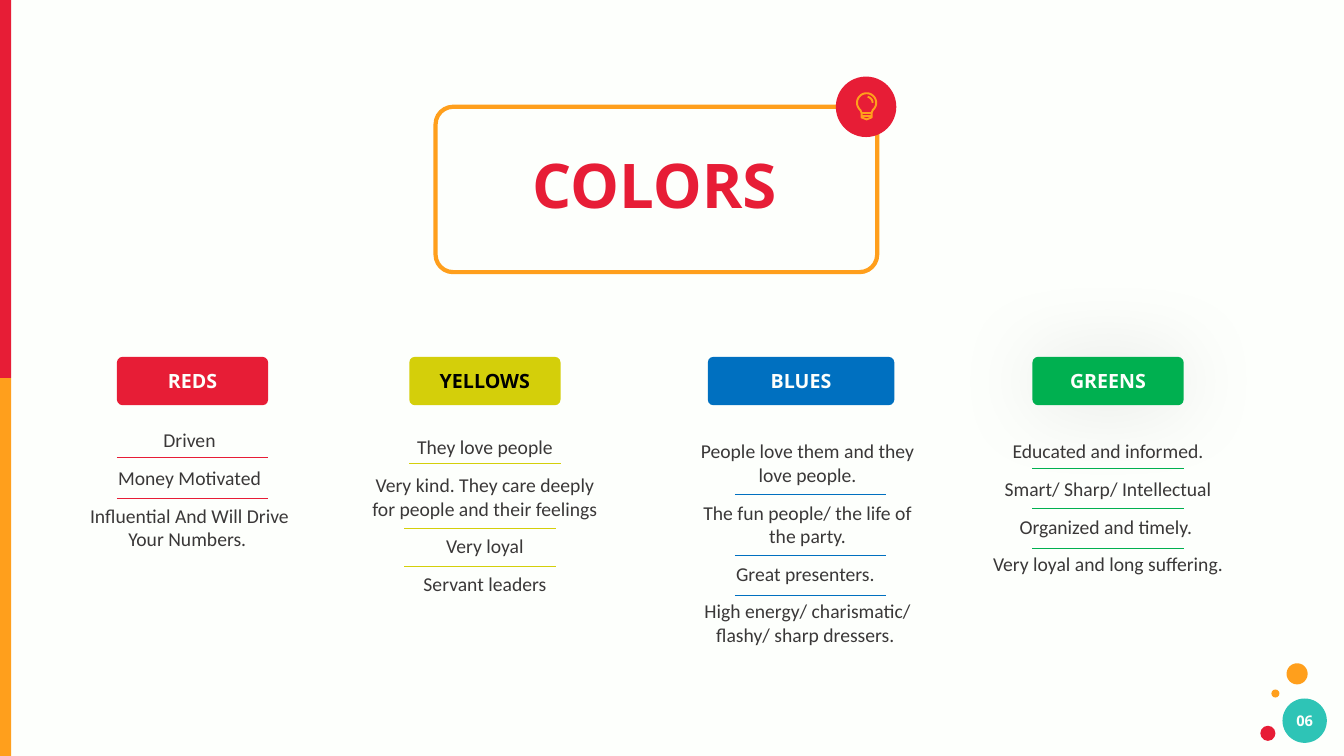
import math

from lxml import etree
from pptx import Presentation
from pptx.dml.color import RGBColor
from pptx.enum.shapes import MSO_CONNECTOR, MSO_SHAPE
from pptx.enum.text import MSO_ANCHOR, PP_ALIGN
from pptx.oxml.ns import qn
from pptx.util import Inches, Pt

RECTANGLE, OVAL, ROUNDED = MSO_SHAPE.RECTANGLE, MSO_SHAPE.OVAL, MSO_SHAPE.ROUNDED_RECTANGLE
STRAIGHT = MSO_CONNECTOR.STRAIGHT
MIDDLE, CENTER = MSO_ANCHOR.MIDDLE, PP_ALIGN.CENTER

RED = RGBColor(0xE7, 0x1D, 0x36)
ORANGE = RGBColor(0xFF, 0x9F, 0x1C)
TEAL = RGBColor(0x2E, 0xC4, 0xB6)
YELLOW = RGBColor(0xD4, 0xCF, 0x0A)
BLUE = RGBColor(0x00, 0x70, 0xC0)
GREEN = RGBColor(0x00, 0xB0, 0x50)
WHITE = RGBColor(0xFD, 0xFF, 0xFC)
BLACK = RGBColor(0x00, 0x00, 0x00)
GREY = RGBColor(0x3A, 0x38, 0x38)

presentation = Presentation()
presentation.slide_width, presentation.slide_height = Inches(13.33), Inches(7.5)
slide = presentation.slides.add_slide(presentation.slide_layouts[6])
slide.background.fill.solid()
slide.background.fill.fore_color.rgb = WHITE


def add_filled(kind, left, top, width, height, color):
    shape = slide.shapes.add_shape(kind, Inches(left), Inches(top), Inches(width), Inches(height))
    shape.shadow.inherit = False
    shape.fill.solid()
    shape.fill.fore_color.rgb = color
    shape.line.fill.background()
    return shape


def write(shape, *lines, font, size, color, bold=False, space_before=0):
    """Fill the shape with one centred paragraph per line."""
    frame = shape.text_frame
    frame.word_wrap = True
    for index, line in enumerate(lines):
        paragraph = frame.add_paragraph() if index else frame.paragraphs[0]
        paragraph.alignment = CENTER
        paragraph.space_before = Pt(space_before)
        run = paragraph.add_run()
        run.text = line
        run.font.name, run.font.size, run.font.bold = font, Pt(size), bold
        run.font.color.rgb = color


# Side bars and corner dots
for top, color in ((0, RED), (3.75, ORANGE)):
    add_filled(RECTANGLE, 0, top, 0.11, 3.75, color)
for left, top, diameter, color in (
    (12.72, 6.93, 0.44, TEAL),
    (12.76, 6.58, 0.21, ORANGE),
    (12.5, 7.2, 0.15, RED),
    (12.61, 6.84, 0.08, ORANGE),
):
    add_filled(OVAL, left, top, diameter, diameter, color)
page_number = slide.shapes.add_textbox(Inches(12.68), Inches(7.01), Inches(0.52), Inches(0.28))
write(page_number, "06", font="Open Sans", size=10.5, color=WHITE, bold=True)

# Title frame with its badge
title_frame = add_filled(ROUNDED, 4.32, 1.06, 4.38, 1.64, WHITE)
title_frame.adjustments[0] = 0.106
title_frame.fill.background()
title_frame.line.color.rgb = ORANGE
title_frame.line.width = Pt(3)
add_filled(OVAL, 8.29, 0.76, 0.6, 0.6, RED)

# Light bulb: glass and base, two threads, a highlight; offsets from the bulb centre
glass = [(0.095 * math.cos(math.radians(angle)), 0.095 * math.sin(math.radians(angle)))
         for angle in range(130, 411, 10)]
base = [(0.05, 0.1), (0.05, 0.145), (0, 0.165), (-0.05, 0.145), (-0.05, 0.1)]
highlight = [(0.06 * math.cos(math.radians(angle)), 0.06 * math.sin(math.radians(angle)))
             for angle in range(-80, 1, 10)]
threads = [[(-0.05, y), (0.05, y)] for y in (0.1, 0.13)]
for outline, closed in ((glass + base, True), (highlight, False),
                        (threads[0], False), (threads[1], False)):
    points = [(Inches(8.595 + x), Inches(1.02 + y)) for x, y in outline]
    builder = slide.shapes.build_freeform(*points[0])
    builder.add_line_segments(points[1:], close=closed)
    stroke = builder.convert_to_shape()
    stroke.shadow.inherit = False
    stroke.fill.background()
    stroke.line.color.rgb = ORANGE
    stroke.line.width = Pt(1.4)

title = slide.shapes.add_textbox(Inches(4.32), Inches(1.41), Inches(4.34), Inches(0.84))
write(title, "COLORS", font="Noto Sans", size=44, color=RED, bold=True)

# Columns: name, colour, name colour, label left and width, text left and top, traits, rules
columns = (
    ("REDS", RED, WHITE, 1.16, 1.5, 0.64, 4.2,
     ("Driven", "Money Motivated", "Influential And Will Drive Your Numbers. "),
     ((1.16, 4.54), (1.16, 4.94))),
    ("YELLOWS", YELLOW, BLACK, 4.06, 1.5, 3.57, 4.13,
     ("They love people", "Very kind. They care deeply for people and their feelings",
      "Very loyal", "Servant leaders"),
     ((4.06, 4.6), (4.01, 5.24), (4.01, 5.62))),
    ("BLUES", BLUE, WHITE, 7.02, 1.85, 6.77, 4.31,
     ("People love them and they love people.", "The fun people/ the life of the party.",
      "Great presenters. ", "High energy/ charismatic/ flashy/ sharp dressers. "),
     ((7.29, 4.9), (7.29, 5.51), (7.29, 5.91))),
    ("GREENS", GREEN, WHITE, 10.24, 1.5, 9.75, 4.31,
     ("Educated and informed.", "Smart/ Sharp/ Intellectual",
      "Organized and timely. ", "Very loyal and long suffering. "),
     ((10.24, 4.65), (10.24, 5.04), (10.24, 5.44))),
)
for name, color, name_color, left, width, text_left, text_top, traits, rules in columns:
    label = add_filled(ROUNDED, left, 3.54, width, 0.48, color)
    label.adjustments[0] = 0.118
    label.text_frame.vertical_anchor = MIDDLE
    write(label, name, font="Open Sans", size=14, color=name_color, bold=True)
    if name == "GREENS":
        effects = label._element.spPr.find(qn("a:effectLst"))
        glow = etree.SubElement(effects, qn("a:outerShdw"), blurRad=str(Pt(60)), dist="0",
                                dir="0", algn="ctr", rotWithShape="0")
        shade = etree.SubElement(glow, qn("a:srgbClr"), val="000000")
        etree.SubElement(shade, qn("a:alpha"), val="10000")

    body = slide.shapes.add_textbox(Inches(text_left), Inches(text_top), Inches(2.48), Inches(0.78))
    write(body, *traits, font="Calibri", size=14, color=GREY, space_before=10)
    if name == "YELLOWS":
        body.text_frame.paragraphs[0].line_spacing = 1.6

    for x, y in rules:
        rule = slide.shapes.add_connector(STRAIGHT, Inches(x), Inches(y), Inches(x + 1.5), Inches(y))
        rule.line.color.rgb = color
        rule.line.width = Pt(0.5)
        etree.SubElement(rule._element.spPr, qn("a:effectLst"))

presentation.save("out.pptx")
